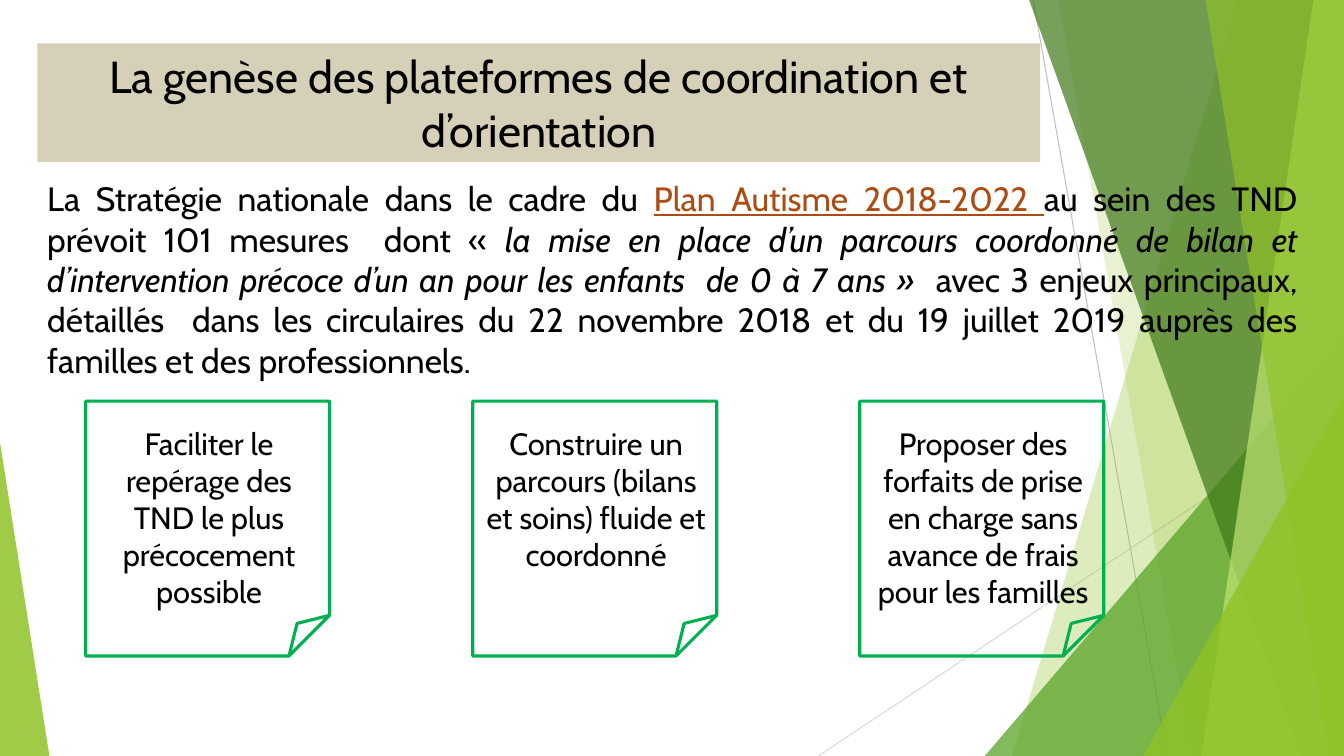
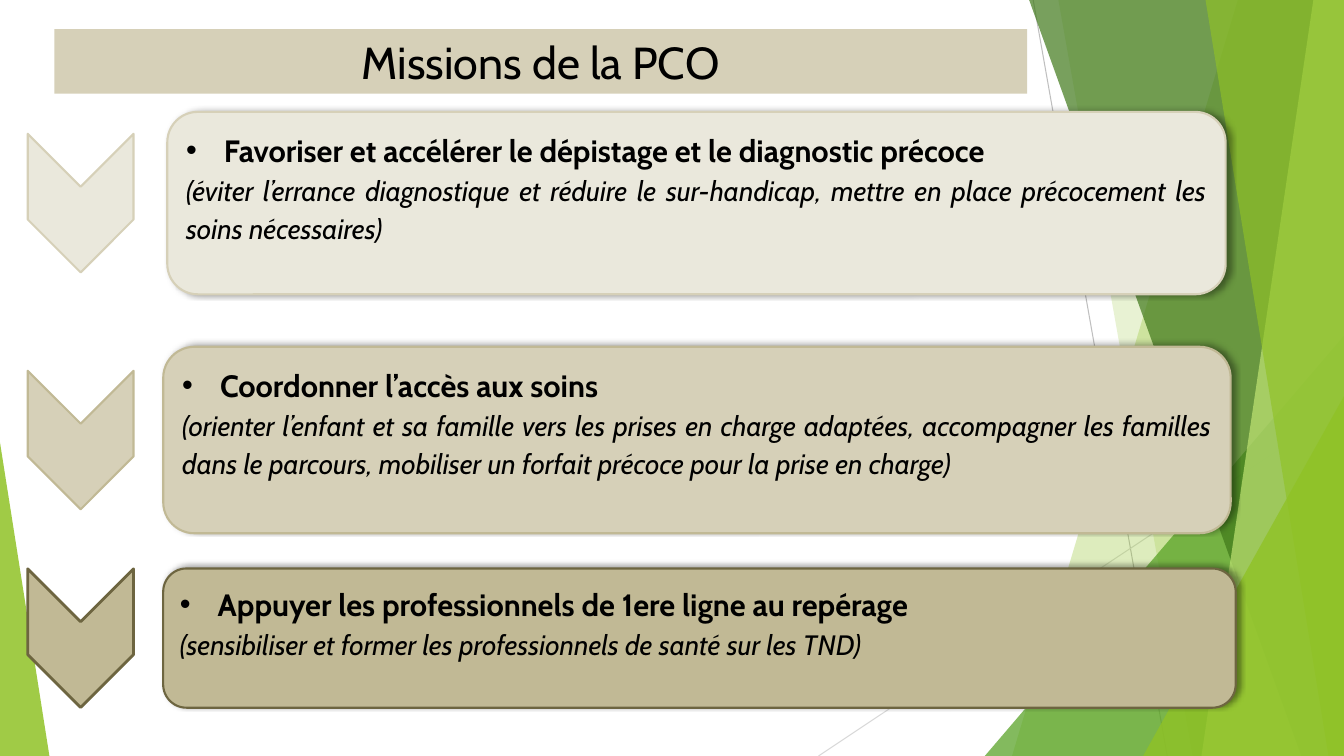
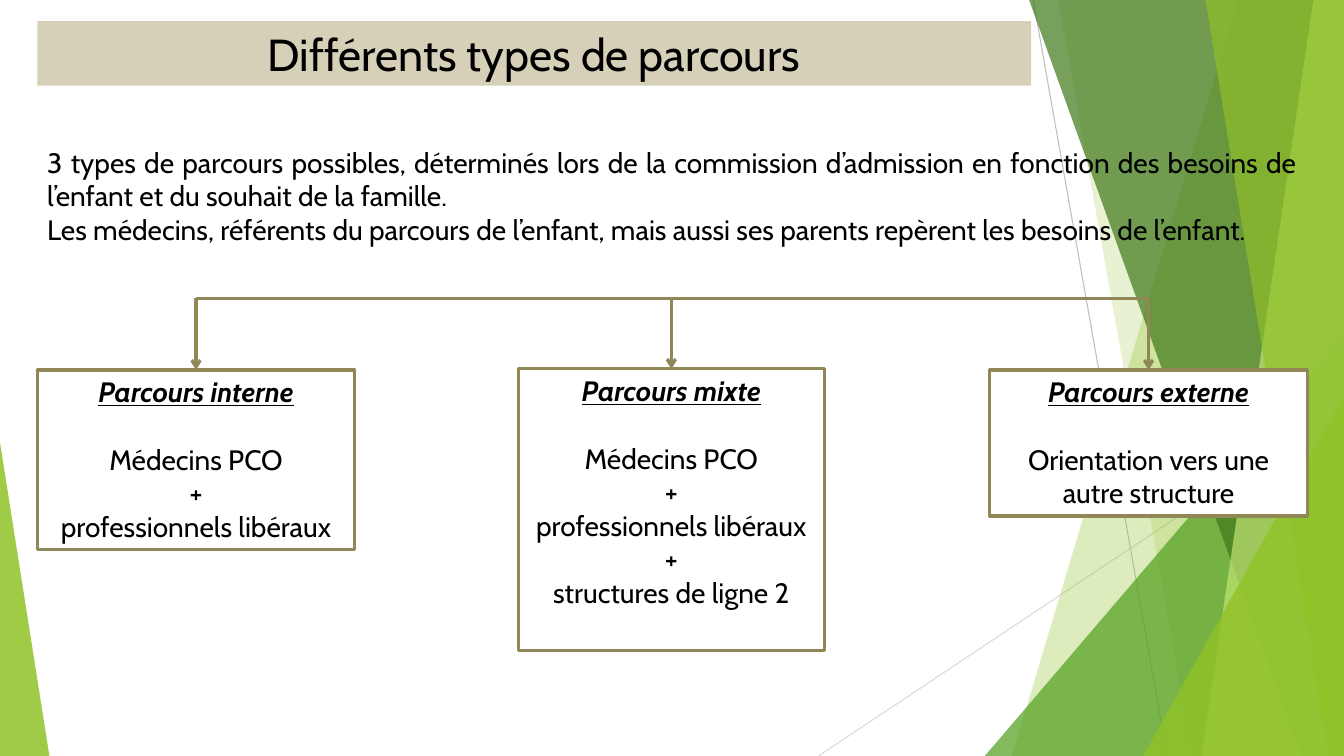
from dataclasses import dataclass
from typing import NamedTuple

from lxml.etree import SubElement
from pptx import Presentation
from pptx.dml.color import RGBColor
from pptx.enum.shapes import MSO_CONNECTOR, MSO_SHAPE
from pptx.enum.text import MSO_ANCHOR, PP_ALIGN
from pptx.oxml.ns import qn
from pptx.util import Pt

RECT = MSO_SHAPE.RECTANGLE
ROUND = MSO_SHAPE.ROUNDED_RECTANGLE
NOTE = MSO_SHAPE.FOLDED_CORNER
CHEVRON = MSO_SHAPE.CHEVRON
PEAK = MSO_SHAPE.ISOSCELES_TRIANGLE
STRAIGHT = MSO_CONNECTOR.STRAIGHT
TOP, MIDDLE = MSO_ANCHOR.TOP, MSO_ANCHOR.MIDDLE
CENTER, JUSTIFY = PP_ALIGN.CENTER, PP_ALIGN.JUSTIFY
WIDE, HIGH = 960, 540


@dataclass(frozen=True)
class Theme:
    font: str = "Cabin"
    ink: str = "000000"
    white: str = "FFFFFF"
    link: str = "AD4C12"
    cream: str = "EAE8DC"
    sand: str = "D6D0B8"
    khaki: str = "C1B995"
    olive: str = "918655"
    bark: str = "6D6540"
    green: str = "00B050"
    lime: str = "90C226"
    leaf: str = "54A021"
    moss: str = "3F7819"
    pale: str = "C0E474"
    gray: str = "BFBFBF"
    mist: str = "D9D9D9"
    title: float = 32
    lead: float = 24
    head: float = 22
    body: float = 20
    hair: float = 0.75
    edge: float = 1.5
    rule: float = 2.25


T = Theme()


class Box(NamedTuple):
    x: float
    y: float
    w: float
    h: float

    @property
    def mid(self) -> float:
        return self.x + self.w / 2


class Run(NamedTuple):
    text: str
    size: float = T.body
    bold: bool = False
    slant: bool = False
    under: bool = False
    color: str = T.ink


class Para(NamedTuple):
    runs: list[Run]
    align: PP_ALIGN = CENTER
    space: float = 1.0
    after: float = 0
    bullet: bool = False


class Sheet(NamedTuple):
    top: float
    base: float
    color: str
    alpha: int


class Wedge(NamedTuple):
    box: Box
    tip: float
    color: str
    alpha: int


class Panel(NamedTuple):
    box: Box
    fill: str
    line: str
    weight: float
    angle: int
    head: str
    text: str


class Card(NamedTuple):
    box: Box
    head: str
    lines: list[str]


DECOR = [
    Sheet(884.16, 722.88, T.lime, 30),
    Sheet(756, 851.76, T.lime, 20),
    Wedge(Box(703.44, 239.76, 256.56, 300.24), 1, T.leaf, 72),
    Sheet(735.12, 929.52, T.moss, 70),
    Sheet(938.16, 858.24, T.pale, 70),
    Sheet(861.12, 948.96, T.lime, 65),
    Wedge(Box(816.48, 282.96, 143.52, 257.04), 1, T.lime, 80),
    Wedge(Box(0, 316.08, 35.28, 223.92), 0, T.lime, 85),
]

NOTES = [
    "Faciliter le repérage des TND le plus précocement possible",
    "Construire un parcours (bilans et soins) fluide et coordonné",
    "Proposer des forfaits de prise en charge sans avance de frais pour les familles",
]

PANELS = [
    Panel(Box(119.5, 79.9, 756, 130.3), T.cream, T.sand, T.edge, 0,
          "Favoriser et accélérer le dépistage et le diagnostic précoce",
          "(éviter l’errance diagnostique et réduire le sur-handicap, mettre en place "
          "précocement les soins nécessaires)"),
    Panel(Box(116.6, 247.7, 762.5, 133.2), T.sand, T.khaki, T.edge, 315,
          "Coordonner l’accès aux soins",
          "(orienter l’enfant et sa famille vers les prises en charge adaptées, "
          "accompagner les familles dans le parcours, mobiliser un forfait précoce "
          "pour la prise en charge)"),
    Panel(Box(116.6, 406.1, 766.1, 99.4), T.khaki, T.bark, 2, 315,
          "Appuyer les professionnels de 1ere ligne au repérage",
          "(sensibiliser et former les professionnels de santé sur les TND)"),
]

CARDS = [
    Card(Box(26.64, 264.24, 226.8, 128.2), "Parcours interne",
         ["Médecins PCO", "+", "professionnels libéraux"]),
    Card(Box(370.1, 263.5, 218.9, 200.9), "Parcours mixte",
         ["Médecins PCO", "+", "professionnels libéraux", "+", "structures de ligne 2"]),
    Card(Box(707.04, 264.24, 226.8, 104.4), "Parcours externe",
         ["Orientation vers une autre structure"]),
]


def rgb(code: str) -> RGBColor:
    return RGBColor.from_string(code)


def paint(shape, fill: str | None, line: str | None = None, weight: float = T.edge) -> None:
    shape.shadow.inherit = False
    if fill:
        shape.fill.solid()
        shape.fill.fore_color.rgb = rgb(fill)
    else:
        shape.fill.background()
    if line:
        shape.line.color.rgb = rgb(line)
        shape.line.width = Pt(weight)
    else:
        shape.line.fill.background()


def fade(shape, alpha: int) -> None:
    color = next(shape.element.iter(qn("a:srgbClr")))
    SubElement(color, qn("a:alpha"), val=str(alpha * 1000))


def place(box: Box) -> tuple[Pt, ...]:
    return tuple(Pt(side) for side in box)


def draw(slide, kind: MSO_SHAPE, box: Box, fill: str | None,
         line: str | None = None, weight: float = T.edge):
    shape = slide.shapes.add_shape(kind, *place(box))
    paint(shape, fill, line, weight)
    return shape


def stroke(slide, x1: float, y1: float, x2: float, y2: float, color: str,
           weight: float, arrow: bool = False):
    line = slide.shapes.add_connector(STRAIGHT, Pt(x1), Pt(y1), Pt(x2), Pt(y2))
    line.line.color.rgb = rgb(color)
    line.line.width = Pt(weight)
    if arrow:
        SubElement(line.get_or_add_ln(), qn("a:tailEnd"), type="arrow")
    SubElement(line.element.spPr, qn("a:effectLst"))
    return line


def write(shape, paras: list[Para], anchor: MSO_ANCHOR = TOP) -> None:
    frame = shape.text_frame
    frame.word_wrap = True
    frame.vertical_anchor = anchor
    for i, para in enumerate(paras):
        p = frame.add_paragraph() if i else frame.paragraphs[0]
        p.alignment = para.align
        p.line_spacing = para.space
        p.space_after = Pt(para.after)
        if para.bullet:
            props = p._p.get_or_add_pPr()
            props.set("marL", str(Pt(27)))
            props.set("indent", str(Pt(-27)))
            SubElement(props, qn("a:buFont"), typeface="Arial")
            SubElement(props, qn("a:buChar"), char="•")
        for run in para.runs:
            r = p.add_run()
            r.text = run.text
            font = r.font
            font.name = T.font
            font.size = Pt(run.size)
            font.bold = run.bold
            font.italic = run.slant
            font.underline = run.under
            font.color.rgb = rgb(run.color)


def label(slide, box: Box, paras: list[Para]) -> None:
    write(slide.shapes.add_textbox(*place(box)), paras)


def title(slide, box: Box, text: str) -> None:
    write(draw(slide, RECT, box, T.sand), [Para([Run(text, T.title)])], MIDDLE)


def cast(shape, angle: int) -> None:
    effects = shape.element.spPr.find(qn("a:effectLst"))
    shadow = SubElement(effects, qn("a:outerShdw"), blurRad=str(Pt(4)), dist=str(Pt(3)),
                        dir=str(angle * 60000), algn="ctr", rotWithShape="0")
    color = SubElement(shadow, qn("a:srgbClr"), val=T.ink)
    SubElement(color, qn("a:alpha"), val="40000")


def adorn(slide, layout) -> None:
    for old in list(layout.placeholders):
        layout.shapes.element.remove(old.element)
    parts = [
        stroke(slide, 738, 0, 833.76, HIGH, T.gray, T.hair),
        stroke(slide, WIDE, 290.16, 584.64, HIGH, T.mist, T.hair),
    ]
    for item in DECOR:
        if isinstance(item, Sheet):
            pen = slide.shapes.build_freeform(Pt(item.top), Pt(0), 1.0)
            ends = [(WIDE, 0), (WIDE, HIGH), (item.base, HIGH)]
            pen.add_line_segments([(Pt(x), Pt(y)) for x, y in ends])
            shape = pen.convert_to_shape()
            paint(shape, item.color)
        else:
            shape = draw(slide, PEAK, item.box, item.color)
            shape.adjustments[0] = item.tip
        fade(shape, item.alpha)
        parts.append(shape)
    for part in parts:
        layout.shapes.element.append(part.element)


def origin(slide) -> None:
    title(slide, Box(26.64, 30.96, 716.4, 84.96),
          "La genèse des plateformes de coordination et d’orientation")
    label(slide, Box(26.64, 123.84, 907.2, 152.64), [Para([
        Run("La Stratégie nationale dans le cadre du ", T.lead),
        Run("Plan Autisme 2018-2022 ", T.lead, under=True, color=T.link),
        Run("au sein des TND prévoit 101 mesures  dont « ", T.lead),
        Run("la mise en place d’un parcours coordonné de bilan et d’intervention précoce "
            "d’un an pour les enfants  de 0 à 7 ans »", T.lead, slant=True),
        Run("  avec 3 enjeux principaux, détaillés  dans les circulaires du 22 novembre "
            "2018 et du 19 juillet 2019 auprès des familles et des professionnels.", T.lead),
    ], JUSTIFY)])
    for i, text in enumerate(NOTES):
        box = Box(61.2 + i * 276.48, 286.56, 174.24, 182)
        note = draw(slide, NOTE, box, None, T.green, T.rule)
        write(note, [Para([Run(text, T.head)])])
        note.text_frame.margin_left = Pt(9)
        note.text_frame.margin_top = Pt(16.6)


def goals(slide) -> None:
    for panel in PANELS:
        box = panel.box
        long, wide = 99, 75.6
        mark = Box(57.6 - long / 2, box.y + (box.h - wide) / 2, long, wide)
        draw(slide, CHEVRON, mark, panel.fill, panel.line, panel.weight).rotation = 90
        shape = draw(slide, ROUND, box, panel.fill, panel.line)
        cast(shape, panel.angle)
        write(shape, [
            Para([Run(panel.head, T.head, bold=True)], JUSTIFY, 1.15, bullet=True),
            Para([Run(panel.text, slant=True)], JUSTIFY, 1.15),
        ])
    title(slide, Box(38.88, 20.88, 694.8, 46.08), "Missions de la PCO")


def routes(slide) -> None:
    title(slide, Box(26.64, 15.12, 709.92, 46.08), "Différents types de parcours")
    label(slide, Box(26.64, 100.08, 907.2, 104.4), [Para([Run(text)], JUSTIFY) for text in (
        "3 types de parcours possibles, déterminés lors de la commission d’admission en "
        "fonction des besoins de l’enfant et du souhait de la famille.",
        "Les médecins, référents du parcours de l’enfant, mais aussi ses parents repèrent "
        "les besoins de l’enfant.",
    )])
    bar = 213.12
    stroke(slide, CARDS[0].box.mid, bar, CARDS[-1].box.mid, bar, T.olive, T.rule)
    for card in CARDS:
        box = card.box
        shape = draw(slide, RECT, box, T.white, T.olive, T.rule)
        head = Run(card.head, bold=True, slant=True, under=True)
        write(shape, [Para([head], after=24)] + [Para([Run(text)]) for text in card.lines])
        arrow = stroke(slide, box.mid, bar, box.mid, box.y, T.olive, T.rule, True)
        arrow.end_connect(shape, 0)


def main() -> None:
    deck = Presentation()
    deck.slide_width, deck.slide_height = Pt(WIDE), Pt(HIGH)
    blank = deck.slide_layouts[6]
    for i, build in enumerate((origin, goals, routes)):
        slide = deck.slides.add_slide(blank)
        if i == 0:
            adorn(slide, blank)
        build(slide)
    deck.save("out.pptx")


if __name__ == "__main__":
    main()
